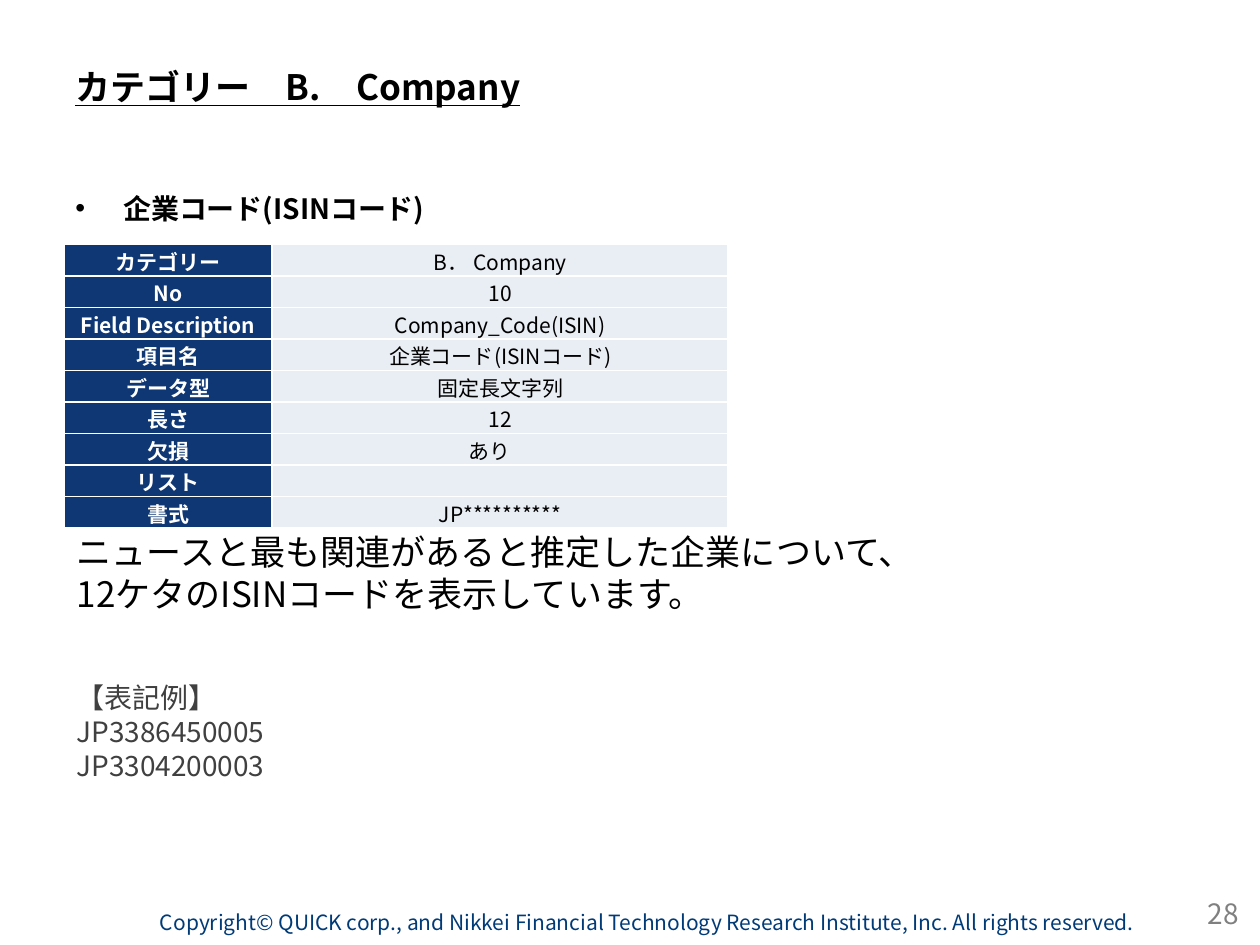
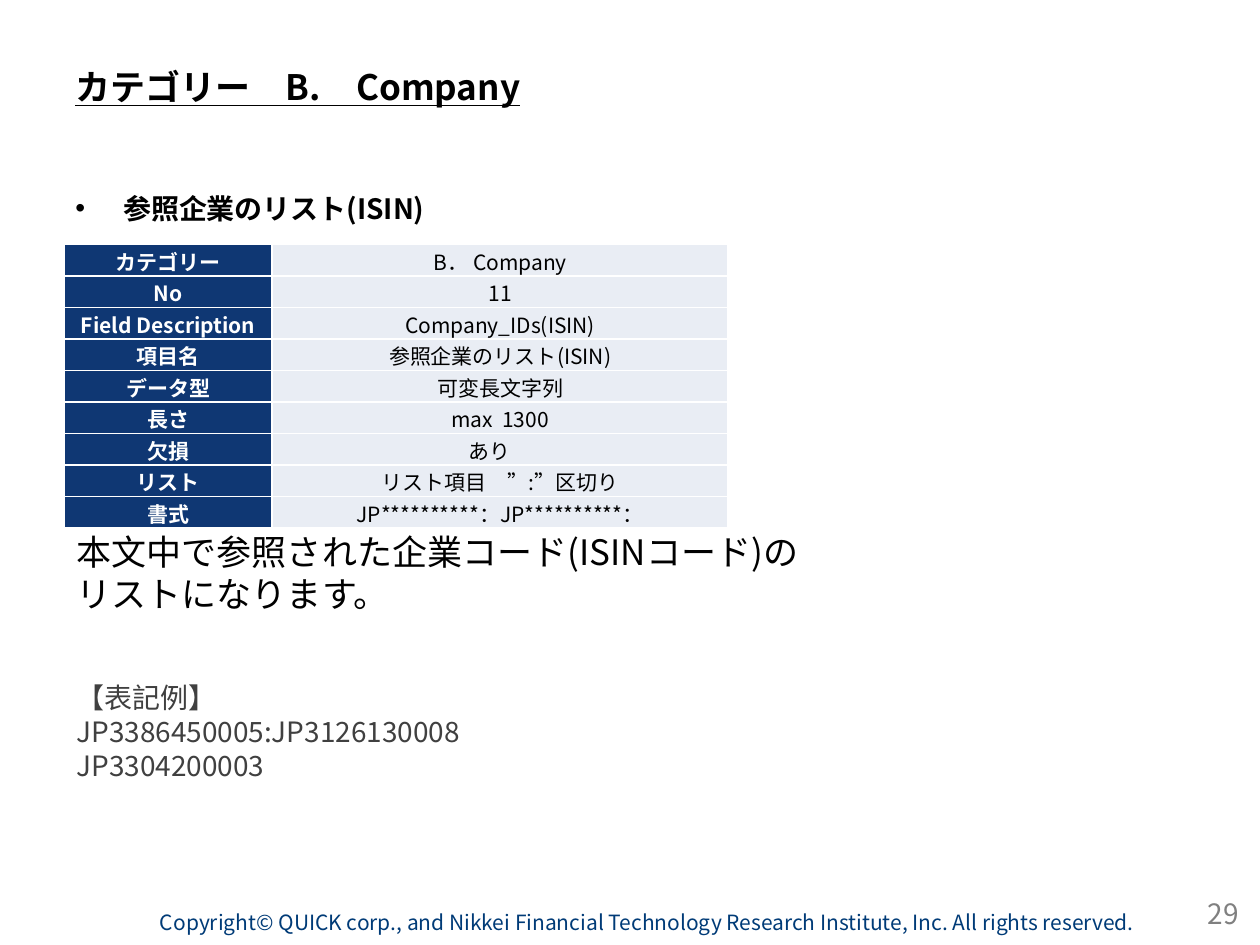
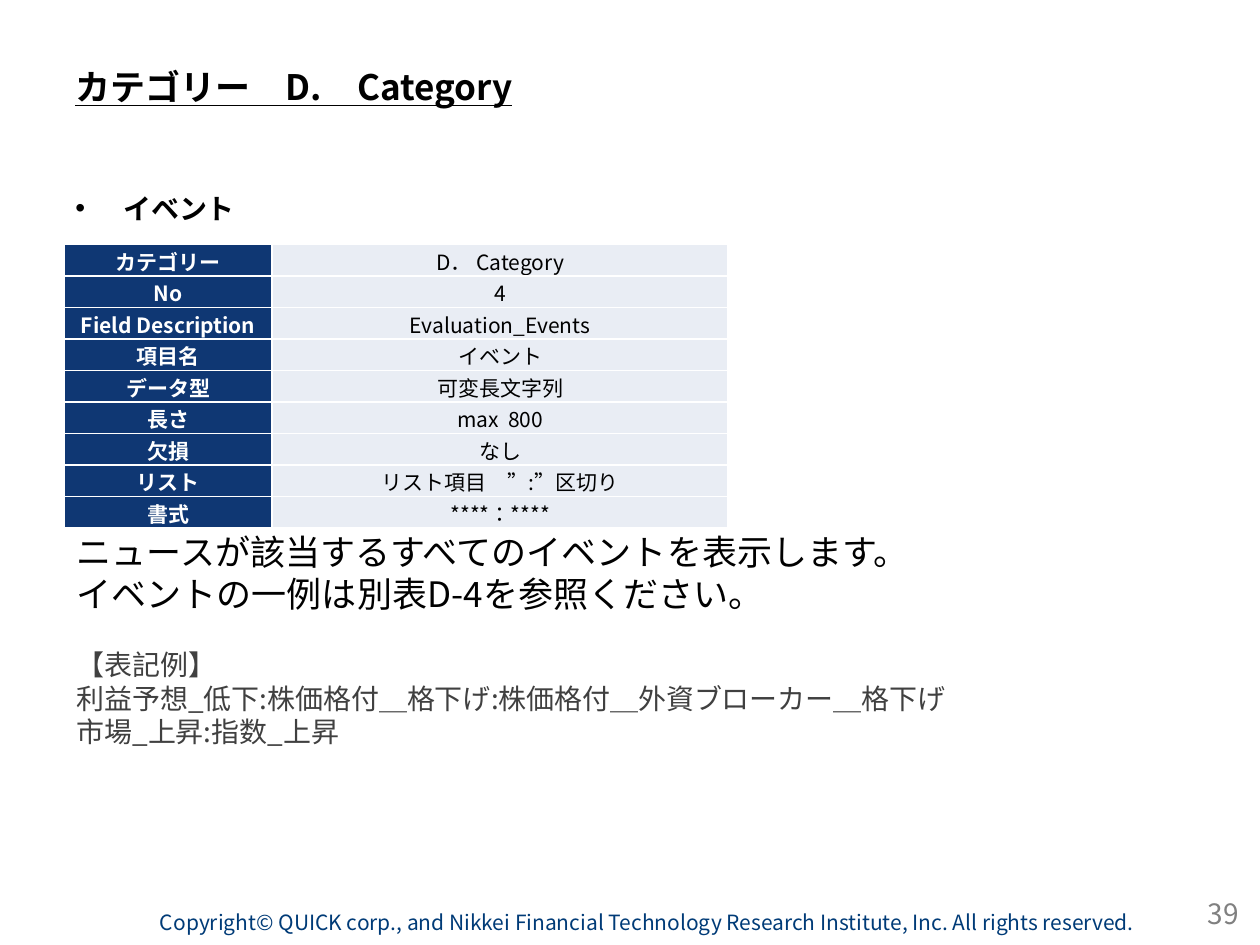
import pptx
import pptx.dml.color
import pptx.enum.shapes
import pptx.enum.text
import pptx.oxml.ns
import pptx.util
from lxml import etree

Inches = pptx.util.Inches
Pt = pptx.util.Pt
RGBColor = pptx.dml.color.RGBColor
ALIGN = pptx.enum.text.PP_ALIGN
ANCHOR = pptx.enum.text.MSO_ANCHOR
qn = pptx.oxml.ns.qn

FONT = "Noto Sans CJK JP"
BLACK = RGBColor(0x00, 0x00, 0x00)
WHITE = RGBColor(0xFF, 0xFF, 0xFF)
NAVY = RGBColor(0x0F, 0x37, 0x73)
PALE_BLUE = RGBColor(0xE9, 0xED, 0xF4)
FOOTER_BLUE = RGBColor(0x00, 0x3B, 0x77)
PAGE_GRAY = RGBColor(0x80, 0x80, 0x80)
EXAMPLE_GRAY = RGBColor(0x40, 0x40, 0x40)

COPYRIGHT = ("Copyright© QUICK corp., and Nikkei Financial Technology "
             "Research Institute, Inc. All rights reserved.")
FIELD_LABELS = ["カテゴリー", "No", "Field Description", "項目名", "データ型",
                "長さ", "欠損", "リスト", "書式"]
LABEL_WIDTH, VALUE_WIDTH, ROW_HEIGHT = 1.65, 3.62, 0.25

FIELDS = [
    dict(
        page="28",
        title="カテゴリー　B.　Company",
        heading="企業コード(ISINコード)",
        values=["B． Company", "10", "Company_Code(ISIN)", "企業コード(ISINコード)",
                "固定長文字列", "12", "あり　", "", "JP**********"],
        description=["ニュースと最も関連があると推定した企業について、",
                     "12ケタのISINコードを表示しています。"],
        examples=["JP3386450005", "JP3304200003"],
        example_gap=38,
        notes_size=(8.98, 2.12),
    ),
    dict(
        page="29",
        title="カテゴリー　B.　Company",
        heading="参照企業のリスト(ISIN)",
        values=["B． Company", "11", "Company_IDs(ISIN)", "参照企業のリスト(ISIN)",
                "可変長文字列", "max  1300", "あり　", "リスト項目　”:”区切り",
                "JP**********：JP**********："],
        description=["本文中で参照された企業コード(ISINコード)の",
                     "リストになります。"],
        examples=["JP3386450005:JP3126130008", "JP3304200003"],
        example_gap=38,
        notes_size=(8.98, 2.12),
    ),
    dict(
        page="39",
        title="カテゴリー　D.　Category",
        heading="イベント",
        values=["D． Category", "4", "Evaluation_Events", "イベント",
                "可変長文字列", "max  800", "なし", "リスト項目　”:”区切り",
                "****：****"],
        description=["ニュースが該当するすべてのイベントを表示します。",
                     "イベントの一例は別表D-4を参照ください。"],
        examples=["利益予想_低下:株価格付＿格下げ:株価格付＿外資ブローカー＿格下げ",
                  "市場_上昇:指数_上昇"],
        example_gap=19,
        notes_size=(9.37, 1.85),
    ),
]


def write(paragraph, text, size, color=BLACK, bold=False, underline=False,
          align=ALIGN.LEFT, before=0, bullet=False):
    paragraph.alignment = align
    if before:
        paragraph.space_before = Pt(before)
    if bullet:
        properties = paragraph._p.get_or_add_pPr()
        properties.set("marL", str(Inches(0.38)))
        properties.set("indent", str(-Inches(0.38)))
        etree.SubElement(properties, qn("a:buFont"), typeface="Arial")
        etree.SubElement(properties, qn("a:buChar"), char="•")
    if not text:
        etree.SubElement(paragraph._p, qn("a:endParaRPr"), sz=str(size * 100))
        return
    run = paragraph.add_run()
    run.text = text
    font = run.font
    font.name, font.size, font.bold = FONT, Pt(size), bold
    if underline:
        font.underline = True
    font.color.rgb = color
    etree.SubElement(run._r.get_or_add_rPr(), qn("a:ea"), typeface=FONT)


def add_text_frame(slide, left, top, width, height, anchor=ANCHOR.TOP):
    frame = slide.shapes.add_textbox(Inches(left), Inches(top), Inches(width),
                                     Inches(height)).text_frame
    frame.word_wrap = True
    frame.vertical_anchor = anchor
    return frame


def add_footer(slide, page):
    band = slide.shapes.add_shape(pptx.enum.shapes.MSO_SHAPE.RECTANGLE, Inches(1.27),
                                  Inches(7.22), Inches(7.86), Inches(0.2))
    band.shadow.inherit = False
    band.fill.solid()
    band.fill.fore_color.rgb = WHITE
    band.line.fill.background()
    frame = band.text_frame
    frame.word_wrap = True
    frame.vertical_anchor = ANCHOR.TOP
    frame.margin_left = frame.margin_right = frame.margin_top = frame.margin_bottom = 0
    write(frame.paragraphs[0], COPYRIGHT, 12, color=FOOTER_BLUE)
    number = add_text_frame(slide, 7.6, 7.05, 2.33, 0.4, ANCHOR.MIDDLE)
    write(number.paragraphs[0], page, 16, color=PAGE_GRAY, align=ALIGN.RIGHT)


def add_borders(cell):
    properties = cell._tc.get_or_add_tcPr()
    for side in ("lnL", "lnR", "lnT", "lnB"):
        line = etree.SubElement(properties, qn(f"a:{side}"), w=str(Pt(1)))
        fill = etree.SubElement(line, qn("a:solidFill"))
        etree.SubElement(fill, qn("a:srgbClr"), val=str(WHITE))


def fill_cell(cell, text, background, color, bold):
    add_borders(cell)
    cell.fill.solid()
    cell.fill.fore_color.rgb = background
    cell.vertical_anchor = ANCHOR.MIDDLE
    cell.margin_left = cell.margin_right = cell.margin_top = Inches(0.01)
    cell.margin_bottom = 0
    write(cell.text_frame.paragraphs[0], text, 12, color=color, bold=bold,
          align=ALIGN.CENTER)


def add_field_table(slide, values):
    table = slide.shapes.add_table(
        len(FIELD_LABELS), 2, Inches(0.51), Inches(1.94),
        Inches(LABEL_WIDTH + VALUE_WIDTH), Inches(ROW_HEIGHT * len(FIELD_LABELS))).table
    table.first_row = table.horz_banding = False
    table.columns[0].width = Inches(LABEL_WIDTH)
    table.columns[1].width = Inches(VALUE_WIDTH)
    for row, (label, value) in enumerate(zip(FIELD_LABELS, values)):
        table.rows[row].height = Inches(ROW_HEIGHT)
        fill_cell(table.cell(row, 0), label, NAVY, WHITE, True)
        fill_cell(table.cell(row, 1), value, PALE_BLUE, BLACK, False)


def add_notes(slide, description, examples, gap, size):
    frame = add_text_frame(slide, 0.51, 4.16, *size)
    first, *others = description
    write(frame.paragraphs[0], first, 20)
    for line in others:
        write(frame.add_paragraph(), line, 20)
    write(frame.add_paragraph(), "【表記例】", 16, color=EXAMPLE_GRAY, before=gap)
    for example in examples:
        write(frame.add_paragraph(), example, 16, color=EXAMPLE_GRAY)


def add_field_slide(deck, field):
    slide = deck.slides.add_slide(deck.slide_layouts[6])
    add_footer(slide, field["page"])
    title = add_text_frame(slide, 0.5, 0.3, 9, 0.77, ANCHOR.MIDDLE)
    write(title.paragraphs[0], field["title"], 20, bold=True, underline=True)
    heading = add_text_frame(slide, 0.5, 1.47, 9, 5.35)
    write(heading.paragraphs[0], field["heading"], 16, bold=True, bullet=True)
    add_field_table(slide, field["values"])
    add_notes(slide, field["description"], field["examples"], field["example_gap"],
              field["notes_size"])


def main():
    deck = pptx.Presentation()
    deck.slide_width, deck.slide_height = Inches(10), Inches(7.5)
    for field in FIELDS:
        add_field_slide(deck, field)
    deck.save("out.pptx")


if __name__ == "__main__":
    main()
